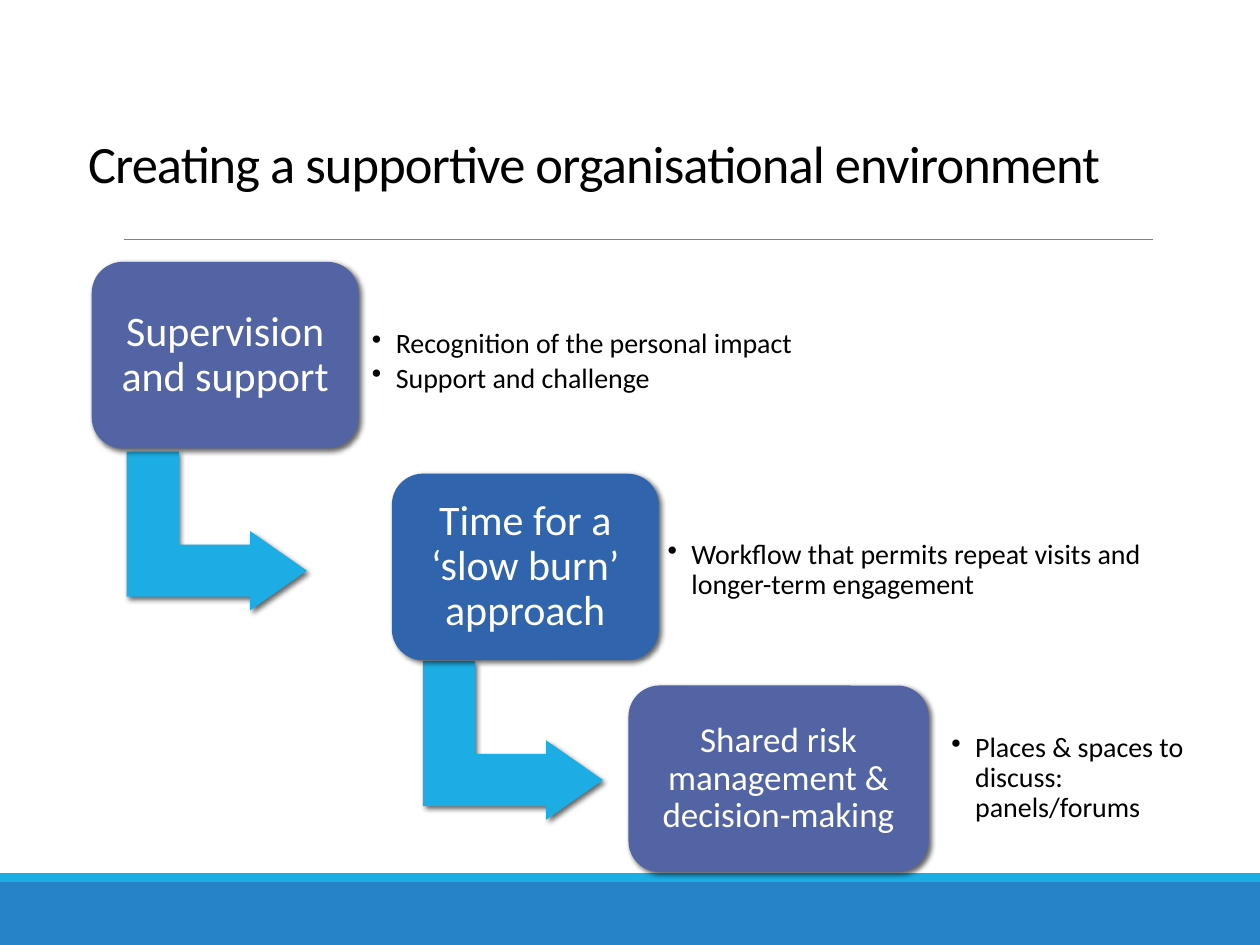
from lxml import etree
from pptx import Presentation
from pptx.dml.color import RGBColor
from pptx.enum import shapes, text
from pptx.oxml import ns
from pptx.util import Cm, Pt


def paint(fill, colour):
    fill.solid()
    fill.fore_color.rgb = RGBColor.from_string(colour)


def write(para, words, size, colour):
    """Add one run and return it."""
    span = para.add_run()
    span.text = words
    span.font.name = "Calibri"
    span.font.size = Pt(size)
    paint(span.font.fill, colour)
    return span


deck = Presentation()
deck.slide_width, deck.slide_height = Cm(25.4), Cm(19.05)
page = deck.slides.add_slide(deck.slide_layouts[5])

# Footer bands and the rule under the title
for top, height, colour in [(17.78, 1.27, "2683C6"), (17.6, 0.18, "1CADE4")]:
    band = page.shapes.add_shape(
        shapes.MSO_SHAPE.RECTANGLE, 0, Cm(top), deck.slide_width, Cm(height))
    paint(band.fill, colour)
    band.line.fill.background()
    band.shadow.inherit = False

rule = page.shapes.add_connector(
    shapes.MSO_CONNECTOR.STRAIGHT, Cm(2.49), Cm(4.83), Cm(23.24), Cm(4.83))
paint(rule.line.fill, "808080")
rule.line.width = Pt(0.5)
etree.SubElement(rule._element.spPr, ns.qn("a:effectLst"))

title = page.shapes.title
title.left, title.top, title.width, title.height = Cm(1.52), Cm(1.27), Cm(22.35), Cm(2.77)
frame = title.text_frame
frame.word_wrap = True
frame.auto_size = text.MSO_AUTO_SIZE.NONE
frame.vertical_anchor = text.MSO_ANCHOR.BOTTOM
para = frame.paragraphs[0]
para.alignment = text.PP_ALIGN.LEFT
para.line_spacing = 0.85
span = write(para, "Creating a supportive organisational environment", 30, "000000")
span.font._element.set("spc", "-50")

# Each step: label, size, colour, left, width, bullet area (left, top, width, height), bullets
steps = [
    ("Supervision and support", 24, "5264A3", 1.85, 5.38, (7.32, 5.21, 11.81, 4.17),
     ["Recognition of the personal impact", "Support and challenge"]),
    ("Time for a ‘slow burn’ approach", 24, "3064AC", 7.9, 5.38, (13.28, 9.98, 11.58, 3.05),
     ["Workflow that permits repeat visits and longer-term engagement"]),
    ("Shared risk management & decision-making", 20, "5264A3", 12.67, 6.05,
     (19, 14.17, 5.87, 3.05), ["Places & spaces to discuss: panels/forums"]),
]
first_top, step_gap, step_height = 5.28, 4.27, 3.76
arrow_places = [(2.77, 8.89), (8.74, 13.11)]
raised = []

for index, (label, size, colour, left, width, area, bullets) in enumerate(steps):
    if index < len(arrow_places):
        x, y = arrow_places[index]
        arrow = page.shapes.add_shape(
            shapes.MSO_SHAPE.BENT_UP_ARROW, Cm(x), Cm(y), Cm(3.2), Cm(3.63))
        arrow.rotation = 90
        for number, value in enumerate([0.328, 0.25, 0.358]):
            arrow.adjustments[number] = value
        paint(arrow.fill, "1CADE4")
        raised.append(arrow)

    box = page.shapes.add_shape(
        shapes.MSO_SHAPE.ROUNDED_RECTANGLE, Cm(left),
        Cm(first_top + index * step_gap), Cm(width), Cm(step_height))
    box.adjustments[0] = 0.167
    paint(box.fill, colour)
    raised.append(box)
    frame = box.text_frame
    frame.word_wrap = True
    frame.vertical_anchor = text.MSO_ANCHOR.MIDDLE
    frame.margin_left = frame.margin_right = Cm(0.23)
    frame.margin_top = frame.margin_bottom = Cm(0.23)
    para = frame.paragraphs[0]
    para.alignment = text.PP_ALIGN.CENTER
    para.line_spacing = 0.9
    write(para, label, size, "FFFFFF")

    frame = page.shapes.add_textbox(*[Cm(length) for length in area]).text_frame
    frame.word_wrap = True
    frame.vertical_anchor = text.MSO_ANCHOR.MIDDLE
    frame.margin_left = frame.margin_right = Cm(0.18)
    frame.margin_top = frame.margin_bottom = Cm(0.18)
    for number, words in enumerate(bullets):
        para = frame.add_paragraph() if number else frame.paragraphs[0]
        para.line_spacing = 0.9
        para.space_after = Pt(2.4)
        props = para._p.get_or_add_pPr()
        props.set("marL", str(Cm(0.48)))
        props.set("indent", str(-Cm(0.48)))
        etree.SubElement(props, ns.qn("a:buChar"), char="•")
        write(para, words, 16, "000000")

# Soft shadow falling to the lower right
for shape in raised:
    shape.line.fill.background()
    shape.shadow.inherit = False
    effects = shape._element.spPr.find(ns.qn("a:effectLst"))
    shadow = etree.SubElement(
        effects, ns.qn("a:outerShdw"), blurRad=str(Pt(3)), dist=str(Pt(2)),
        dir="2700000", rotWithShape="0")
    tint = etree.SubElement(shadow, ns.qn("a:srgbClr"), val="000000")
    etree.SubElement(tint, ns.qn("a:alpha"), val="60000")

deck.save("out.pptx")
